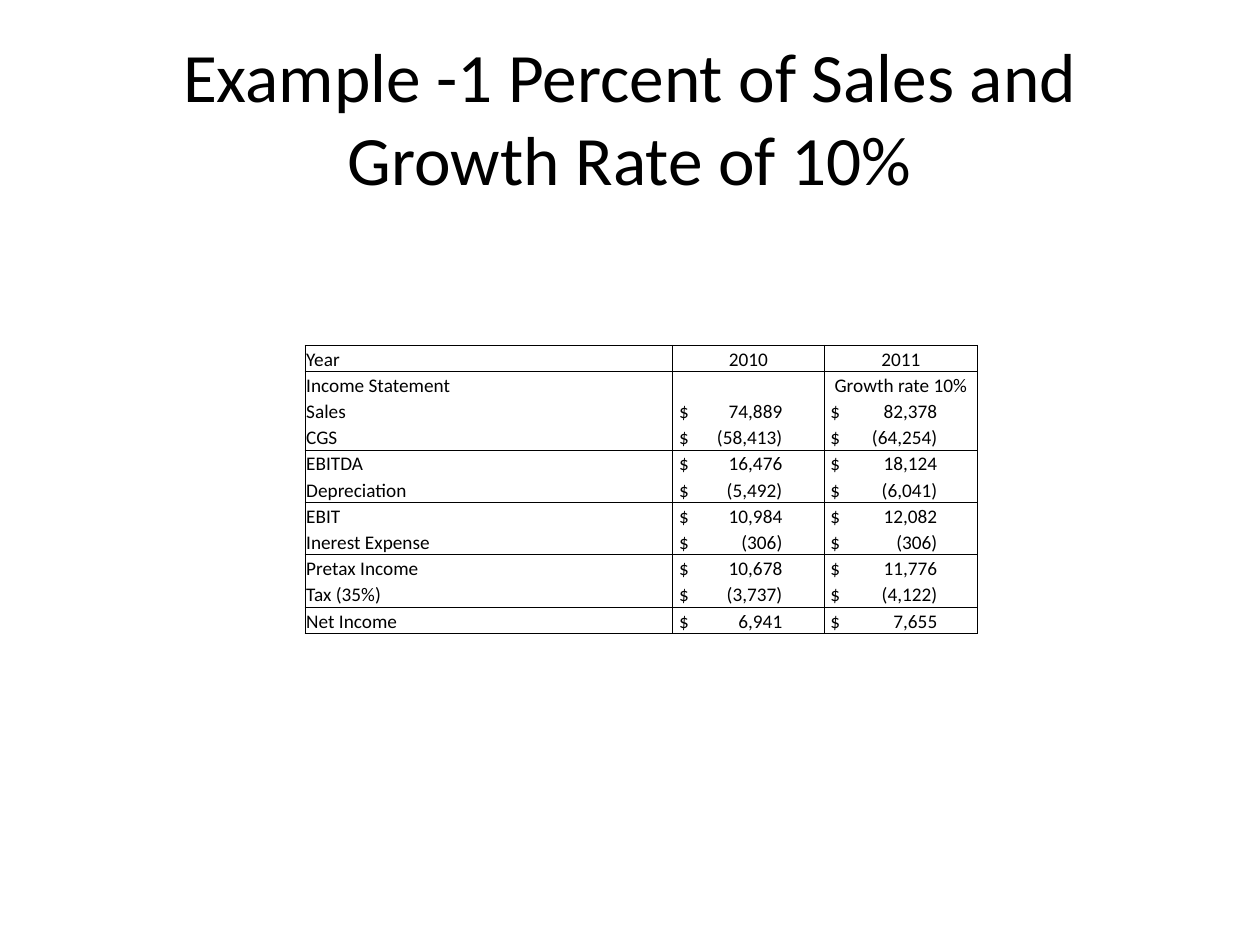
from lxml.etree import SubElement
from pptx import Presentation
from pptx.dml.color import RGBColor
from pptx.enum.text import MSO_ANCHOR, PP_ALIGN
from pptx.oxml import parse_xml
from pptx.oxml.ns import nsdecls, qn
from pptx.util import Inches, Pt

# Content
TITLE = "Example -1 Percent of Sales and Growth Rate of 10%"
ROWS = [
    ("Year", "2010", "2011"),
    ("Income Statement", "", "Growth rate 10%"),
    ("Sales", "74,889", "82,378"),
    ("CGS", "(58,413)", "(64,254)"),
    ("EBITDA", "16,476", "18,124"),
    ("Depreciation", "(5,492)", "(6,041)"),
    ("EBIT", "10,984", "12,082"),
    ("Inerest Expense", "(306)", "(306)"),
    ("Pretax Income", "10,678", "11,776"),
    ("Tax (35%)", "(3,737)", "(4,122)"),
    ("Net Income", "6,941", "7,655"),
]
HEADER_ROWS = 2
RULED_ROWS = {0, 3, 5, 7, 9, 10}  # rows with a line below
COL_WIDTHS = (2.92, 1.2, 1.22)
AMOUNT_TABS = (None, 0.82, 0.85)  # right edge of the amounts
ROW_HEIGHT = 2.29 / len(ROWS)
BLACK = "000000"


def color(value):
    return RGBColor.from_string(value)


def write(tf, text, size, align=PP_ALIGN.LEFT, font="Calibri", fill=BLACK):
    p = tf.paragraphs[0]
    p.alignment = align
    p.font.size = Pt(size)
    if text:
        r = p.add_run()
        r.text = text
        r.font.name = font
        r.font.size = Pt(size)
        r.font.color.rgb = color(fill)
    return p


def add_right_tab(p, position):
    tabs = parse_xml(f'<a:tabLst {nsdecls("a")}><a:tab pos="{Inches(position)}" algn="r"/></a:tabLst>')
    p._p.get_or_add_pPr().insert(0, tabs)


def set_borders(cell, sides, fill=BLACK, width=0.5):
    tc_pr = cell._tc.get_or_add_tcPr()
    for i, side in enumerate("LRTB"):
        drawn = side in sides
        paint = f'<a:solidFill><a:srgbClr val="{fill}"/></a:solidFill>' if drawn else "<a:noFill/>"
        tc_pr.insert(i, parse_xml(f'<a:ln{side} {nsdecls("a")} w="{Pt(width)}">{paint}</a:ln{side}>'))


prs = Presentation()
prs.slide_width, prs.slide_height = Inches(10), Inches(7.5)
s = prs.slides.add_slide(prs.slide_layouts[6])

# Title
sp = s.shapes.add_textbox(Inches(0.5), Inches(0.3), Inches(9), Inches(1.25))
tf = sp.text_frame
tf.word_wrap = True
tf.vertical_anchor = MSO_ANCHOR.MIDDLE
write(tf, TITLE, 39.6, align=PP_ALIGN.CENTER)

# Income statement
frame = s.shapes.add_table(len(ROWS), len(COL_WIDTHS), Inches(2.42), Inches(2.74),
                           Inches(sum(COL_WIDTHS)), Inches(ROW_HEIGHT * len(ROWS)))
table = frame.table
table.first_row = table.horz_banding = False
for column, width in zip(table.columns, COL_WIDTHS):
    column.width = Inches(width)

for i, values in enumerate(ROWS):
    table.rows[i].height = Inches(ROW_HEIGHT)
    for j, value in enumerate(values):
        cell = table.cell(i, j)
        is_amount = j > 0 and i >= HEADER_ROWS
        cell.vertical_anchor = MSO_ANCHOR.BOTTOM
        cell.margin_left = Inches(0.05 if is_amount else 0.01)
        cell.margin_right = cell.margin_top = Inches(0.01)
        cell.margin_bottom = 0
        cell.fill.background()
        if is_amount:
            p = write(cell.text_frame, f"$\t{value}", 11)
            add_right_tab(p, AMOUNT_TABS[j])
        else:
            write(cell.text_frame, value, 11, align=PP_ALIGN.CENTER if j else PP_ALIGN.LEFT)
        top = "T" if i == 0 or i - 1 in RULED_ROWS else ""
        bottom = "B" if i in RULED_ROWS else ""
        set_borders(cell, "LR" + top + bottom)

prs.save("out.pptx")
